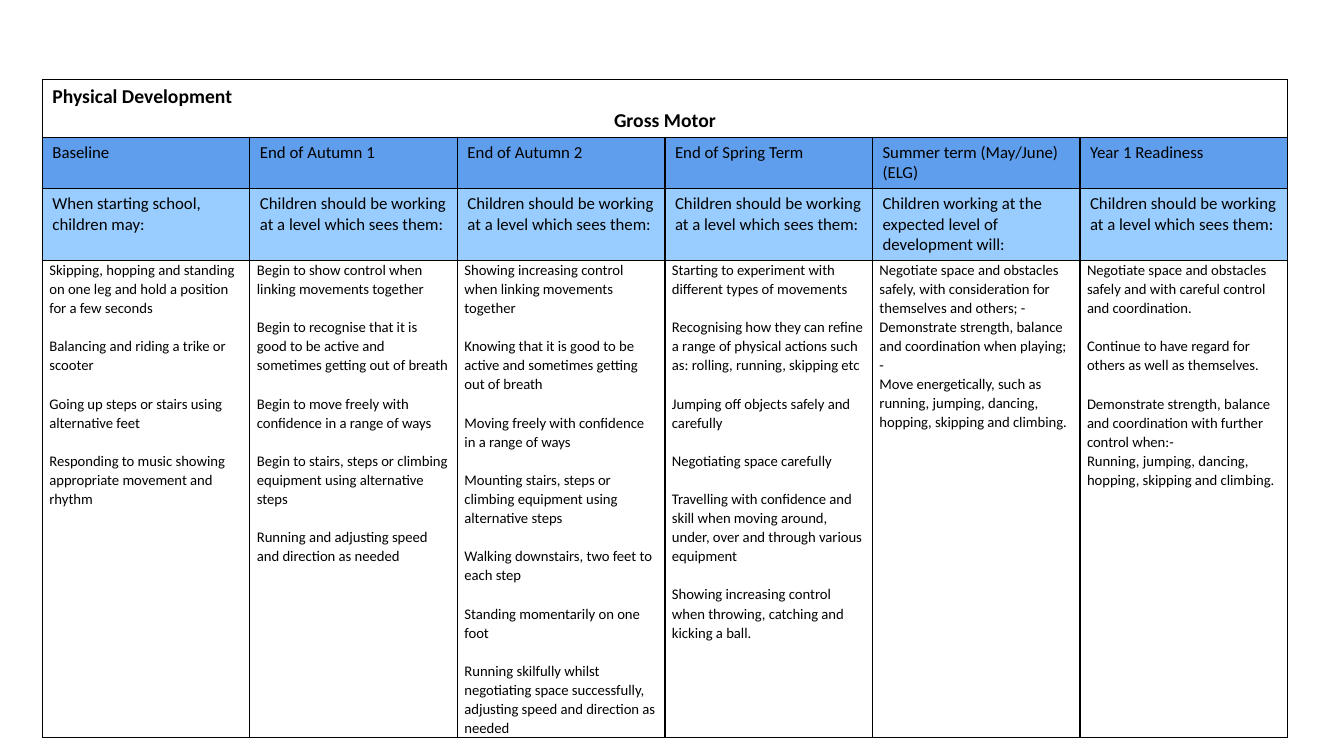
"""Build the Gross Motor progression table slide."""
from lxml import etree
from pptx import Presentation, util as u
from pptx.dml.color import RGBColor
from pptx.enum import text
from pptx.oxml.ns import qn

AREA, STRAND = "Physical Development", "Gross Motor"
LEVEL = "Children should be working at a level which sees them:"

# Each stage: heading, lead-in, groups of statements (a gap separates groups).
STAGES = [
    ("Baseline", "When starting school, children may:", [
        ["Skipping, hopping and standing on one leg and hold a position for a few seconds"],
        ["Balancing and riding a trike or scooter"],
        ["Going up steps or stairs using alternative feet"],
        ["Responding to music showing appropriate movement and rhythm"],
    ]),
    ("End of Autumn 1", LEVEL, [
        ["Begin to show control when linking movements together"],
        ["Begin to recognise that it is good to be active and sometimes getting out of breath"],
        ["Begin to move freely with confidence in a range of ways"],
        ["Begin to stairs, steps or climbing equipment using alternative steps"],
        ["Running and adjusting speed and direction as needed"],
    ]),
    ("End of Autumn 2", LEVEL, [
        ["Showing increasing control when linking movements together"],
        ["Knowing that it is good to be active and sometimes getting out of breath"],
        ["Moving freely with confidence in a range of ways"],
        ["Mounting stairs, steps or climbing equipment using alternative steps"],
        ["Walking downstairs, two feet to each step"],
        ["Standing momentarily on one foot"],
        ["Running skilfully whilst negotiating space successfully, "
         "adjusting speed and direction as needed"],
    ]),
    ("End of Spring Term", LEVEL, [
        ["Starting to experiment with different types of movements"],
        ["Recognising how they can refine a range of physical actions such as: "
         "rolling, running, skipping etc"],
        ["Jumping off objects safely and carefully"],
        ["Negotiating space carefully"],
        ["Travelling with confidence and skill when moving around, "
         "under, over and through various equipment"],
        ["Showing increasing control when throwing, catching and kicking a ball."],
    ]),
    ("Summer term (May/June) (ELG)",
     "Children working at the expected level of development will:", [
         ["Negotiate space and obstacles safely, with consideration for themselves and others; -",
          "Demonstrate strength, balance and coordination when playing; -",
          "Move energetically, such as running, jumping, dancing, "
          "hopping, skipping and climbing."],
     ]),
    ("Year 1 Readiness", LEVEL, [
        ["Negotiate space and obstacles safely and with careful control and coordination."],
        ["Continue to have regard for others as well as themselves."],
        ["Demonstrate strength, balance and coordination with further control when:-",
         "Running, jumping, dancing, hopping, skipping and climbing."],
    ]),
]
LEFT, TOP, WIDTH = 0.42, 0.79, 12.35
ROW_HEIGHTS = [0.57, 0.51, 0.7, 4.73]
BLACK, HEADING_FILL, LEAD_FILL = "000000", "5E9EEC", "99CCFF"
BODY_SIZE, BODY_SPACING = 10.5, 1.07
GROUP_GAP = 13.7


def color(value):
    """Return the colour of a hex string."""
    return RGBColor.from_string(value)


def style(paragraph, size, bold=False):
    """Set the font of a paragraph."""
    font = paragraph.font
    font.name, font.size, font.bold = "Calibri", u.Pt(size), bold
    font.color.rgb = color(BLACK)


def outline(cell):
    """Draw a thin black border on every side of a cell."""
    properties = cell._tc.get_or_add_tcPr()
    for side in ("lnL", "lnR", "lnT", "lnB"):
        line = etree.SubElement(properties, qn(f"a:{side}"), w=str(u.Pt(1)))
        fill = etree.SubElement(line, qn("a:solidFill"))
        etree.SubElement(fill, qn("a:srgbClr"), val=BLACK)


def label(cell, words, fill):
    """Write a heading into a filled cell."""
    cell.text = words
    style(cell.text_frame.paragraphs[0], 12)
    cell.fill.solid()
    cell.fill.fore_color.rgb = color(fill)


def statements(cell, groups):
    """Write groups of statements with a gap before each later group."""
    cell.margin_left = cell.margin_right = u.Inches(0.07)
    cell.margin_top = cell.margin_bottom = 0
    cell.text = "\n".join(words for group in groups for words in group)
    paragraphs = iter(cell.text_frame.paragraphs)
    for number, group in enumerate(groups):
        for position, _ in enumerate(group):
            paragraph = next(paragraphs)
            style(paragraph, BODY_SIZE)
            paragraph.line_spacing = BODY_SPACING
            if number and position == 0:
                paragraph.space_before = u.Pt(GROUP_GAP)


def main():
    """Build and save the slide."""
    presentation = Presentation()
    presentation.slide_width, presentation.slide_height = u.Inches(13.33), u.Inches(7.5)
    slide = presentation.slides.add_slide(presentation.slide_layouts[6])
    table = slide.shapes.add_table(
        len(ROW_HEIGHTS), len(STAGES), u.Inches(LEFT), u.Inches(TOP),
        u.Inches(WIDTH), u.Inches(sum(ROW_HEIGHTS))).table
    table.first_row = table.horz_banding = False
    for row, height in zip(table.rows, ROW_HEIGHTS):
        row.height = u.Inches(height)
    for cell in table.iter_cells():
        outline(cell)
        cell.fill.background()

    title = table.cell(0, 0)
    title.merge(table.cell(0, len(STAGES) - 1))
    title.text = f"{AREA}\n{STRAND}"
    for paragraph in title.text_frame.paragraphs:
        style(paragraph, 14, bold=True)
    title.text_frame.paragraphs[1].alignment = text.PP_ALIGN.CENTER

    for column, (heading, lead, groups) in enumerate(STAGES):
        label(table.cell(1, column), heading, HEADING_FILL)
        label(table.cell(2, column), lead, LEAD_FILL)
        statements(table.cell(3, column), groups)
    presentation.save("out.pptx")


if __name__ == "__main__":
    main()
